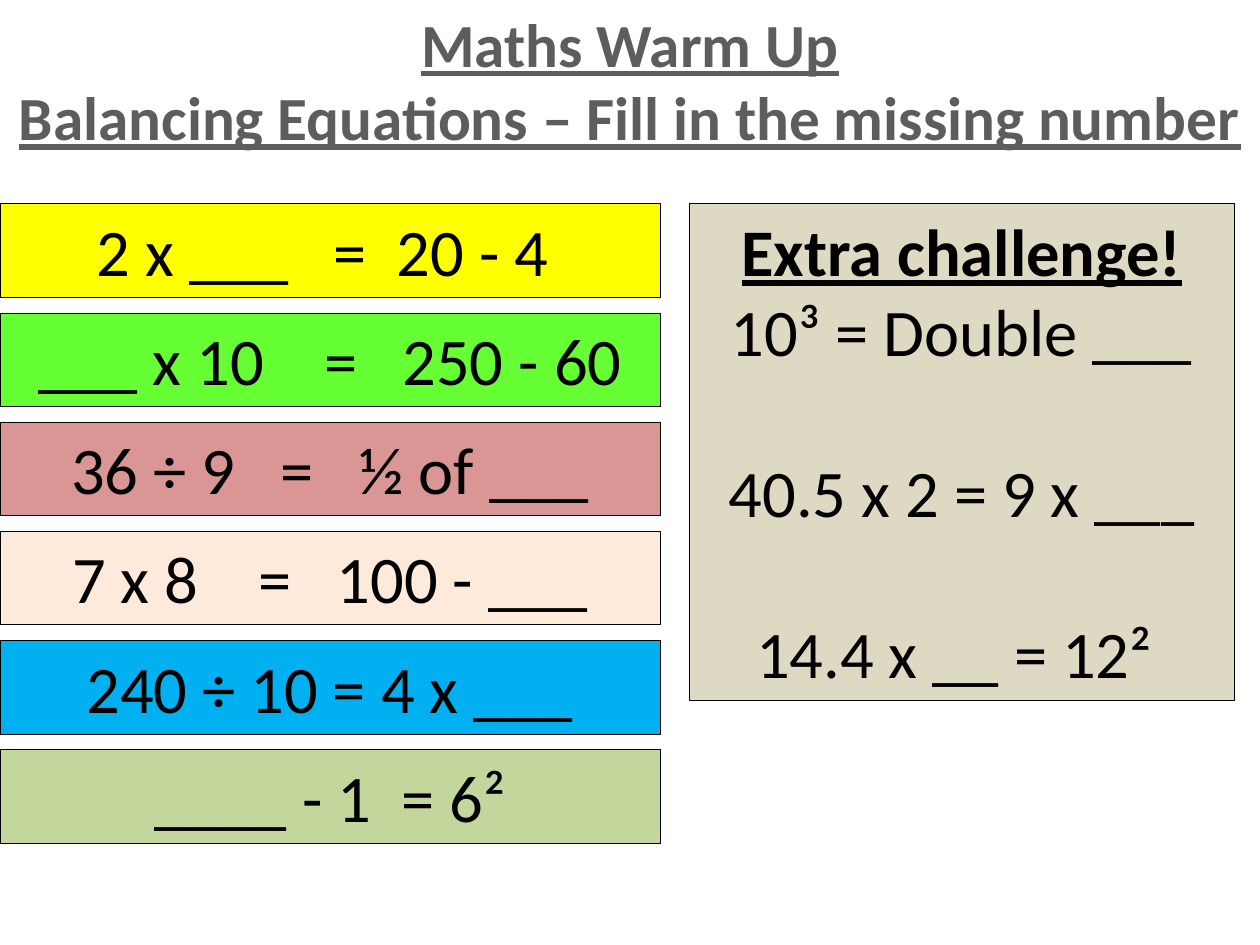
from dataclasses import dataclass

from pptx import Presentation
from pptx import util as u
from pptx.dml.color import RGBColor
from pptx.enum import shapes, text


@dataclass(frozen=True)
class Theme:
    font: str = "Calibri"
    title_size: float = 35
    body_size: float = 38
    title_color: str = "5D5D5D"
    ink: str = "000000"
    panel: str = "DDD9C3"
    line_width: float = 0.5
    space_width: float = 8.6  # one space at body size, in points
    line_height: float = 46.4  # one line at body size, in points


THEME = Theme()

# Left side, spaces before "=", spaces after "=", right side, fill
EQUATIONS = [
    ("2 x ___", 3, 2, "20 - 4 ", "FFFF00"),
    ("___ x 10", 4, 3, "250 - 60", "66FF33"),
    ("36 ÷ 9", 3, 3, "½ of ___", "D99694"),
    ("7 x 8", 4, 3, "100 - ___", "FDEADA"),
    ("240 ÷ 10", 1, 1, "4 x ___", "00B0F0"),
    ("____ - 1", 2, 1, "6²", "C3D69B"),
]
# Text, blank lines' worth of space above
CHALLENGES = [
    ("10³ = Double ___", 0),
    ("40.5 x 2 = 9 x ___", 1),
    ("14.4 x __ = 12² ", 1),
]
ROWS_TOP, ROW_PITCH = 4.11, 2.2


def add_run(paragraph, content, size=THEME.body_size, color=THEME.ink,
            heading=False, tracking=0):
    """Add a run; tracking is extra character spacing in points."""
    run = paragraph.add_run()
    run.text = content
    font = run.font
    font.name, font.size = THEME.font, u.Pt(size)
    font.bold = font.underline = heading
    font.color.rgb = RGBColor.from_string(color)
    if tracking:
        run._r.get_or_add_rPr().set("spc", str(round(tracking * 100)))


def next_paragraph(frame, space_before=0):
    first = frame.paragraphs[0]
    paragraph = frame.add_paragraph() if first.runs else first
    paragraph.alignment = text.PP_ALIGN.CENTER
    paragraph.space_before = u.Pt(space_before)
    return paragraph


def add_box(slide, left, top, width, height, fill):
    shape = slide.shapes.add_shape(
        shapes.MSO_SHAPE.RECTANGLE,
        u.Cm(left), u.Cm(top), u.Cm(width), u.Cm(height))
    shape.shadow.inherit = False
    shape.fill.solid()
    shape.fill.fore_color.rgb = RGBColor.from_string(fill)
    shape.line.color.rgb = RGBColor.from_string(THEME.ink)
    shape.line.width = u.Pt(THEME.line_width)
    frame = shape.text_frame
    frame.word_wrap = True
    frame.vertical_anchor = text.MSO_ANCHOR.TOP
    return frame


def add_title(slide, lines):
    box = slide.shapes.add_textbox(0, 0, u.Cm(25.4), u.Cm(3.25))
    box.text_frame.word_wrap = True
    for line in lines:
        add_run(next_paragraph(box.text_frame), line, size=THEME.title_size,
                color=THEME.title_color, heading=True)


def add_equation(slide, top, left_side, before, after, right_side, fill):
    frame = add_box(slide, 0, top, 13.31, 1.89, fill)
    paragraph = next_paragraph(frame)
    add_run(paragraph, left_side)
    add_run(paragraph, " ", tracking=(before - 1) * THEME.space_width)
    add_run(paragraph, "=")
    add_run(paragraph, " ", tracking=(after - 1) * THEME.space_width)
    add_run(paragraph, right_side)


def add_challenge_panel(slide):
    frame = add_box(slide, 13.89, ROWS_TOP, 11, 10.01, THEME.panel)
    add_run(next_paragraph(frame), "Extra challenge!", heading=True)
    for content, gap in CHALLENGES:
        add_run(next_paragraph(frame, gap * THEME.line_height), content)


def main():
    presentation = Presentation()
    presentation.slide_width, presentation.slide_height = u.Cm(25.4), u.Cm(19.05)
    slide = presentation.slides.add_slide(presentation.slide_layouts[6])

    # Heading
    add_title(slide, ["Maths Warm Up",
                      "Balancing Equations – Fill in the missing number"])
    # Equations on the left
    for index, equation in enumerate(EQUATIONS):
        add_equation(slide, ROWS_TOP + index * ROW_PITCH, *equation)
    # Challenge panel on the right
    add_challenge_panel(slide)

    presentation.save("out.pptx")


if __name__ == "__main__":
    main()
